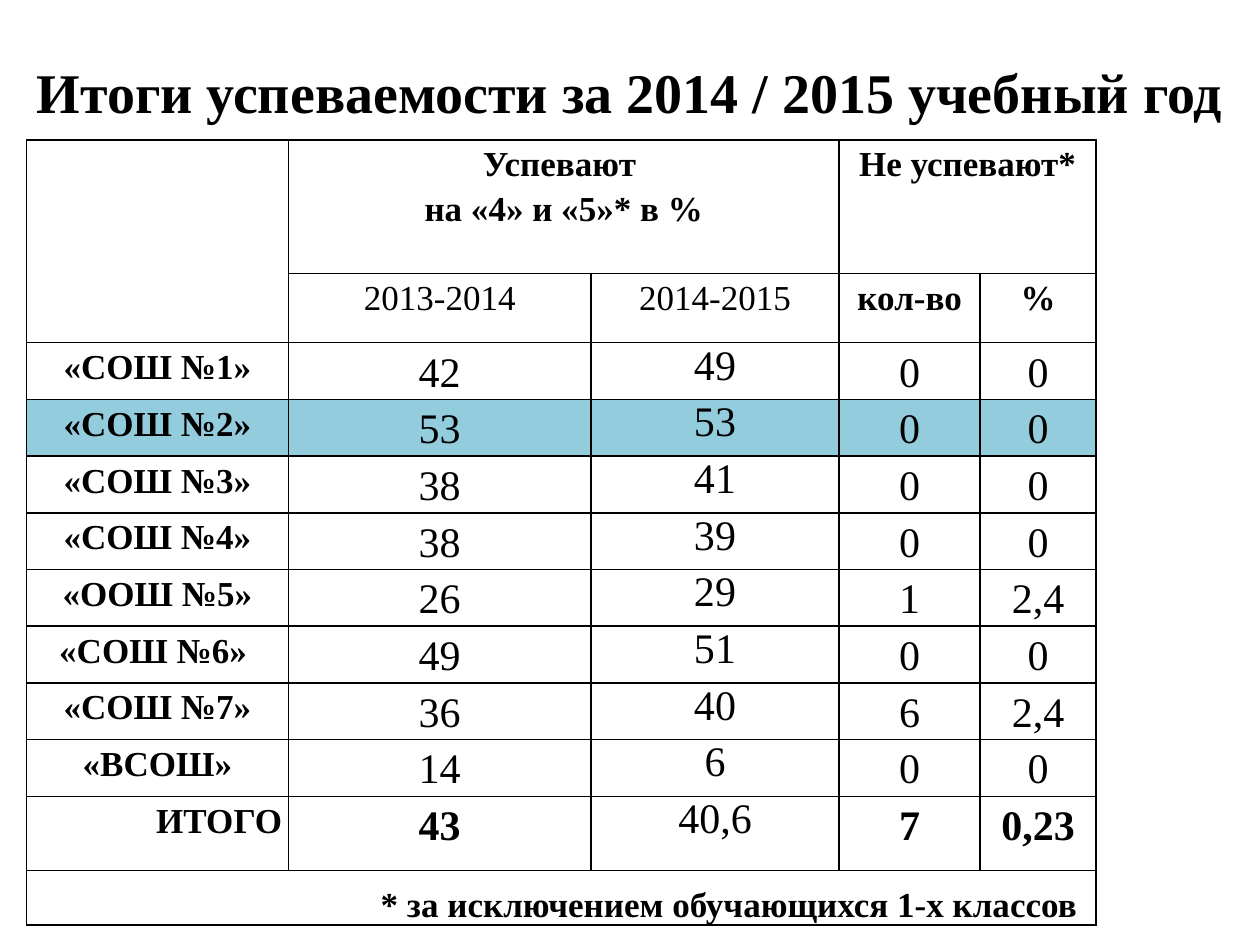
from lxml import etree
from pptx import Presentation
from pptx import util as u
from pptx.dml import color
from pptx.enum import text
from pptx.oxml import ns

SCALE = 9144
COLORS = {"ink": "000000", "highlight": "93CDDD"}
CENTER, RIGHT = text.PP_ALIGN.CENTER, text.PP_ALIGN.RIGHT
COLUMNS = [208, 240, 197, 112, 92]
ROWS = [106, 55] + [45] * 8 + [59, 43]
HIGHLIGHTED_ROW = 3
MERGES = [(0, 0, 1, 0), (0, 1, 0, 2), (0, 3, 0, 4), (11, 0, 11, 4)]
SCHOOLS = [
    ("«СОШ №1»", "42", "49", "0", "0"),
    ("«СОШ №2»", "53", "53", "0", "0"),
    ("«СОШ №3»", "38", "41", "0", "0"),
    ("«СОШ №4»", "38", "39", "0", "0"),
    ("«ООШ №5»", "26", "29", "1", "2,4"),
    ("«СОШ №6» ", "49", "51", "0", "0"),
    ("«СОШ №7»", "36", "40", "6", "2,4"),
    ("«ВСОШ»", "14", "6", "0", "0"),
]
TOTAL = ("ИТОГО", "43", "40,6", "7", "0,23")
FOOTNOTE = "* за исключением обучающихся 1-х классов"


def px(length):
    return u.Emu(length * SCALE)


class Deck:
    """Holds the text style and the current slide, and draws its elements."""

    def __init__(self, width, height, font):
        self.presentation = Presentation()
        self.presentation.slide_width = px(width)
        self.presentation.slide_height = px(height)
        self.slide = self.presentation.slides.add_slide(self.presentation.slide_layouts[6])
        self.font = font

    def add_lines(self, frame, lines, size, bold=True, align=CENTER, spacing=1.0):
        for index, line in enumerate(lines):
            paragraph = frame.paragraphs[0] if index == 0 else frame.add_paragraph()
            paragraph.alignment = align
            paragraph.line_spacing = spacing
            run = paragraph.add_run()
            run.text = line
            run.font.name = self.font
            run.font.size = u.Pt(size)
            run.font.bold = bold
            run.font.color.rgb = color.RGBColor.from_string(COLORS["ink"])

    def title(self, left, top, width, height, line):
        shape = self.slide.shapes.add_textbox(px(left), px(top), px(width), px(height))
        frame = shape.text_frame
        frame.word_wrap = True
        frame.auto_size = text.MSO_AUTO_SIZE.SHAPE_TO_FIT_TEXT
        frame.vertical_anchor = text.MSO_ANCHOR.MIDDLE
        self.add_lines(frame, [line], 32)

    def border(self, cell):
        properties = cell._tc.get_or_add_tcPr()
        for side in ("a:lnL", "a:lnR", "a:lnT", "a:lnB"):
            line = etree.SubElement(properties, ns.qn(side), w=str(u.Pt(1)))
            fill = etree.SubElement(line, ns.qn("a:solidFill"))
            etree.SubElement(fill, ns.qn("a:srgbClr"), val=COLORS["ink"])

    def table(self, left, top, columns, rows, highlighted):
        shape = self.slide.shapes.add_table(
            len(rows), len(columns), px(left), px(top), px(sum(columns)), px(sum(rows)))
        table = shape.table
        table.first_row = table.horz_banding = False
        for column, width in zip(table.columns, columns):
            column.width = px(width)
        for index, (row, height) in enumerate(zip(table.rows, rows)):
            row.height = px(height)
            for cell in row.cells:
                cell.margin_left = cell.margin_right = px(5)
                cell.margin_top = cell.margin_bottom = 0
                self.border(cell)
                if index == highlighted:
                    cell.fill.solid()
                    cell.fill.fore_color.rgb = color.RGBColor.from_string(COLORS["highlight"])
                else:
                    cell.fill.background()
        return table

    def cell(self, cell, lines, size=20, bold=True, align=CENTER, spacing=1.15):
        self.add_lines(cell.text_frame, lines, size, bold, align, spacing)


def main():
    deck = Deck(1000, 750, "Times New Roman")
    table = deck.table(21, 111, COLUMNS, ROWS, HIGHLIGHTED_ROW)
    for top, left, bottom, right in MERGES:
        table.cell(top, left).merge(table.cell(bottom, right))

    deck.cell(table.cell(0, 1), ["Успевают ", "на «4» и «5»* в %"])
    deck.cell(table.cell(0, 3), ["Не успевают*"])
    for column, heading in enumerate(("2013-2014", "2014-2015", "кол-во", "%"), 1):
        deck.cell(table.cell(1, column), [heading], bold=column > 2)

    for row, (name, *values) in enumerate([*SCHOOLS, TOTAL], 2):
        is_total = name == TOTAL[0]
        deck.cell(table.cell(row, 0), [name], align=RIGHT if is_total else CENTER)
        for column, value in enumerate(values, 1):
            current_year = column == 2
            deck.cell(table.cell(row, column), [value], size=24,
                      bold=is_total and not current_year,
                      spacing=1.0 if current_year else 1.15)

    footnote = table.cell(11, 0)
    footnote.vertical_anchor = text.MSO_ANCHOR.BOTTOM
    footnote.margin_right = px(15)
    deck.cell(footnote, [FOOTNOTE], align=RIGHT)

    deck.title(0, 40, 1000, 64, "Итоги успеваемости за 2014 / 2015 учебный год")
    deck.presentation.save("out.pptx")


if __name__ == "__main__":
    main()
